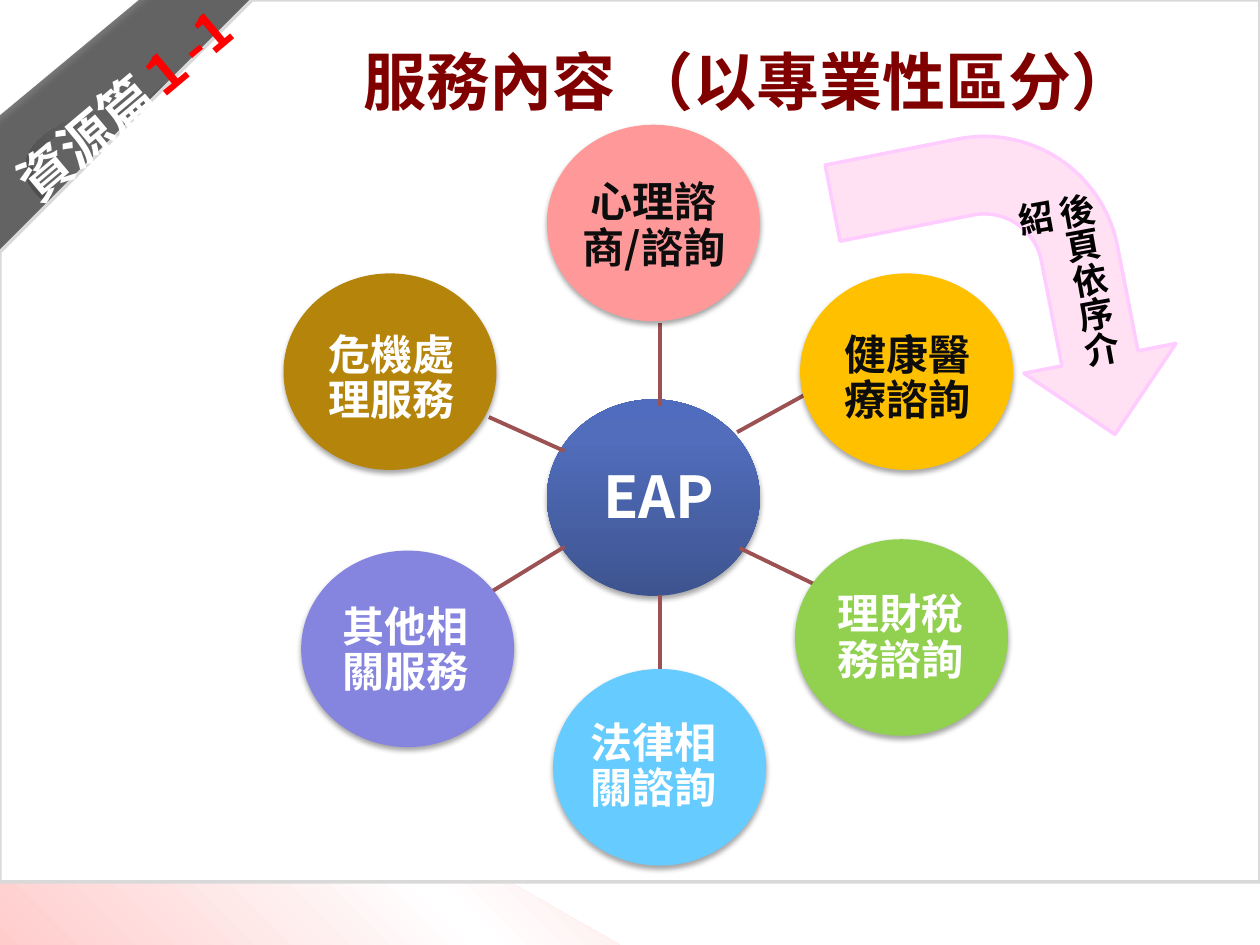
from lxml.etree import SubElement
from pptx import Presentation
from pptx.dml.color import RGBColor
from pptx.enum.shapes import MSO_CONNECTOR, MSO_SHAPE
from pptx.enum.text import MSO_ANCHOR, MSO_AUTO_SIZE, PP_ALIGN
from pptx.oxml.ns import qn
from pptx.util import Inches, Pt

THEME = {
    "font": "Noto Sans CJK SC",
    "title_size": 36, "hub_size": 33, "ribbon_size": 30, "label_size": 24, "note_size": 20,
    "title": "800000", "dark": "0D0D0D", "light": "FFFFFF", "black": "000000", "accent": "FF0000",
    "spoke": "9C5252", "panel": "FFFFFF", "panel_line": "D9D9D9", "ribbon": "404040",
    "arrow": "FFE1F3", "arrow_line": "FFCCFF",
    "corner": [(0, "FFCCCC"), (50, "FFFFFF"), (100, "FFCCCC")],
    "ring": [(0, "808080"), (50, "FFFFFF"), (100, "808080")],
    "blob": [(0, "FFFFFF"), (100, "FF9999")],
    "hub": [(0, "3E5490"), (80, "516DBB"), (100, "4F6CBE")],
}
CIRCLE = (1.69, 1.56)
LABEL = (1.2, 1.1)
CIRCLE_SHADOW = {"alpha": 35, "blur": 3.1, "distance": 1.8}
RIBBON_SHADOW = {"alpha": 40, "blur": 4, "distance": 3}

TITLE = "服務內容 （以專業性區分）"
RIBBON_TEXT = [("資源篇", THEME["light"]), ("１-1", THEME["accent"])]
HUB = {"text": "EAP", "circle": (4.34, 3.17), "label": (4.63, 3.42)}
# text, fill, text colour, circle corner, label corner, spoke from hub to circle
SERVICES = [
    ("心理諮商/諮詢", "FF9999", "dark", (4.34, 0.99), (4.59, 1.25), (5.24, 3.22, 5.24, 2.56)),
    ("健康醫療諮詢", "FFC000", "dark", (6.35, 2.17), (6.6, 2.46), (5.85, 3.43, 6.43, 3.11)),
    ("理財稅務諮詢", "92D050", "light", (6.31, 4.28), (6.55, 4.52), (5.87, 4.35, 6.47, 4.64)),
    ("法律相關諮詢", "66CCFF", "light", (4.39, 5.31), (4.59, 5.54), (5.24, 4.72, 5.24, 5.39)),
    ("其他相關服務", "8585E0", "light", (2.39, 4.37), (2.62, 4.62), (4.48, 4.34, 3.91, 4.69)),
    ("危機處理服務", "B5840B", "light", (2.25, 2.17), (2.51, 2.46), (4.48, 3.58, 3.88, 3.31)),
]
CORNERS = [((5.08, 0, 4.92, 2.81), 180), ((0, 4.69, 4.92, 2.81), 0)]
RINGS = [((0.5, 0.69, 1.94, 0.97), 314.6), ((0.2, 0.85, 1.94, 0.97), 0)]
BLOB = [
    (1.62, 1.62), (1.5, 1.64), (1.36, 1.63), (1.23, 1.62), (1.12, 1.6), (0.99, 1.55),
    (0.89, 1.47), (0.82, 1.38), (0.78, 1.27), (0.79, 1.16), (0.84, 1.04), (0.95, 0.96),
    (1.04, 0.93), (1.14, 0.94), (1.17, 0.84), (1.21, 0.77), (1.29, 0.7), (1.36, 0.67),
    (1.45, 0.67), (1.53, 0.69), (1.66, 0.76), (1.72, 0.83), (1.76, 0.91), (1.79, 1.03),
    (1.79, 1.16), (1.74, 1.32), (1.67, 1.53),
]
PANEL = [(9.65, 0.21), (2.39, 0.22), (0.37, 1.89), (0.35, 2.04), (0.35, 6.96), (9.65, 6.96)]


def box(values):
    return [Inches(value) for value in values]


def color(value):
    return RGBColor.from_string(value)


def add_stops(shape, stops, angle):
    """Gradient fill; an angle of None makes it spread from the centre."""
    shape.fill.gradient()
    gradient = shape._element.spPr.find(qn("a:gradFill"))
    stop_list = gradient.find(qn("a:gsLst"))
    for old_stop in list(stop_list):
        stop_list.remove(old_stop)
    for position, value in stops:
        stop = SubElement(stop_list, qn("a:gs"), pos=str(position * 1000))
        SubElement(stop, qn("a:srgbClr"), val=value)
    if angle is not None:
        shape.fill.gradient_angle = angle
        return
    gradient.remove(gradient.find(qn("a:lin")))
    centre = SubElement(gradient, qn("a:path"), path="rect")
    SubElement(centre, qn("a:fillToRect"), l="50000", t="50000", r="50000", b="50000")


def style(shape, fill, line=None, angle=45, rotation=0, alpha=None, shadow=None):
    shape.rotation = rotation
    shape.shadow.inherit = False
    if isinstance(fill, list):
        add_stops(shape, fill, angle)
    else:
        shape.fill.solid()
        shape.fill.fore_color.rgb = color(fill)
    if alpha:
        fill_color = shape._element.spPr.find(qn("a:solidFill"))[0]
        SubElement(fill_color, qn("a:alpha"), val=str(alpha * 1000))
    if line:
        shape.line.color.rgb = color(line)
        shape.line.width = Pt(2)
    else:
        shape.line.fill.background()
    if shadow:
        effects = shape._element.spPr.find(qn("a:effectLst"))
        outer = SubElement(effects, qn("a:outerShdw"), blurRad=str(Pt(shadow["blur"])),
                           dist=str(Pt(shadow["distance"])), dir="5400000",
                           algn="ctr", rotWithShape="0")
        black = SubElement(outer, qn("a:srgbClr"), val=THEME["black"])
        SubElement(black, qn("a:alpha"), val=str(shadow["alpha"] * 1000))


def add_preset(slide, kind, place, fill, **look):
    shape = slide.shapes.add_shape(kind, *box(place))
    style(shape, fill, **look)
    return shape


def add_outline(slide, points, fill, **look):
    builder = slide.shapes.build_freeform(*points[0], scale=Inches(1))
    builder.add_line_segments(points[1:], close=True)
    style(builder.convert_to_shape(), fill, **look)


def add_spoke(slide, ends):
    spoke = slide.shapes.add_connector(MSO_CONNECTOR.STRAIGHT, *box(ends))
    spoke.line.color.rgb = color(THEME["spoke"])
    spoke.line.width = Pt(2.25)
    SubElement(spoke._element.spPr, qn("a:effectLst"))


def write(shape, runs, size, align=PP_ALIGN.CENTER, anchor=MSO_ANCHOR.TOP,
          margin=None, spacing=None, rotation=0):
    """Fill a text shape with bold runs of (text, colour)."""
    shape.rotation = rotation
    frame = shape.text_frame
    frame.word_wrap = True
    frame.vertical_anchor = anchor
    if margin is not None:
        frame.margin_left = frame.margin_right = Inches(margin)
        frame.margin_top = frame.margin_bottom = Inches(margin)
    paragraph = frame.paragraphs[0]
    paragraph.alignment = align
    if spacing:
        paragraph.line_spacing = spacing
    for text, value in runs:
        run = paragraph.add_run()
        run.text = text
        run.font.size = Pt(size)
        run.font.bold = True
        run.font.color.rgb = color(value)
        run.font.name = THEME["font"]
        SubElement(run._r.get_or_add_rPr(), qn("a:ea"), typeface=THEME["font"])


def add_text(slide, place, runs, size, **look):
    shape = slide.shapes.add_textbox(*box(place))
    write(shape, runs, size, **look)
    return shape


def add_circle(slide, text, corner, label_corner, fill, text_color, size, angle=45):
    add_preset(slide, MSO_SHAPE.OVAL, corner + CIRCLE, fill, angle=angle, shadow=CIRCLE_SHADOW)
    add_text(slide, label_corner + LABEL, [(text, text_color)], size,
             anchor=MSO_ANCHOR.MIDDLE, margin=0.01, spacing=0.9)


def add_backdrop(slide):
    for place, rotation in CORNERS:
        add_preset(slide, MSO_SHAPE.RIGHT_TRIANGLE, place, THEME["corner"], rotation=rotation)
    for place, rotation in RINGS:
        ring = add_preset(slide, MSO_SHAPE.DONUT, place, THEME["ring"], rotation=rotation)
        ring.adjustments[0] = 0.06
    add_outline(slide, BLOB, THEME["blob"], angle=None)
    add_preset(slide, MSO_SHAPE.RECTANGLE, (-1.46, 0.42, 4.42, 0.85), THEME["ribbon"],
               rotation=320.3, alpha=70, shadow=RIBBON_SHADOW)
    add_outline(slide, PANEL, THEME["panel"], line=THEME["panel_line"])


def main():
    presentation = Presentation()
    presentation.slide_width, presentation.slide_height = box((10, 7.5))
    slide = presentation.slides.add_slide(presentation.slide_layouts[5])
    title = slide.shapes.title
    add_backdrop(slide)

    add_circle(slide, HUB["text"], HUB["circle"], HUB["label"], THEME["hub"],
               THEME["light"], THEME["hub_size"], angle=90)
    for text, fill, text_color, corner, label_corner, spoke in SERVICES:
        add_spoke(slide, spoke)
        add_circle(slide, text, corner, label_corner, fill, THEME[text_color],
                   THEME["label_size"])

    title.left, title.top, title.width, title.height = box((1.85, 0.29, 8.19, 0.71))
    write(title, [(TITLE, THEME["title"])], THEME["title_size"])
    slide.shapes._spTree.append(title._element)

    add_preset(slide, MSO_SHAPE.BENT_ARROW, (6.73, 1.09, 2.54, 2.46), THEME["arrow"],
               line=THEME["arrow_line"], rotation=78.9)
    note = add_text(slide, (8.34, 1.44, 0.54, 1.85), [("後頁依序介紹", THEME["black"])],
                    THEME["note_size"], align=PP_ALIGN.LEFT, rotation=349.7)
    note.text_frame.auto_size = MSO_AUTO_SIZE.SHAPE_TO_FIT_TEXT
    note.text_frame._txBody.bodyPr.set("vert", "eaVert")
    add_text(slide, (-0.28, 0.53, 2.54, 0.61), RIBBON_TEXT, THEME["ribbon_size"], rotation=320)
    presentation.save("out.pptx")


if __name__ == "__main__":
    main()
